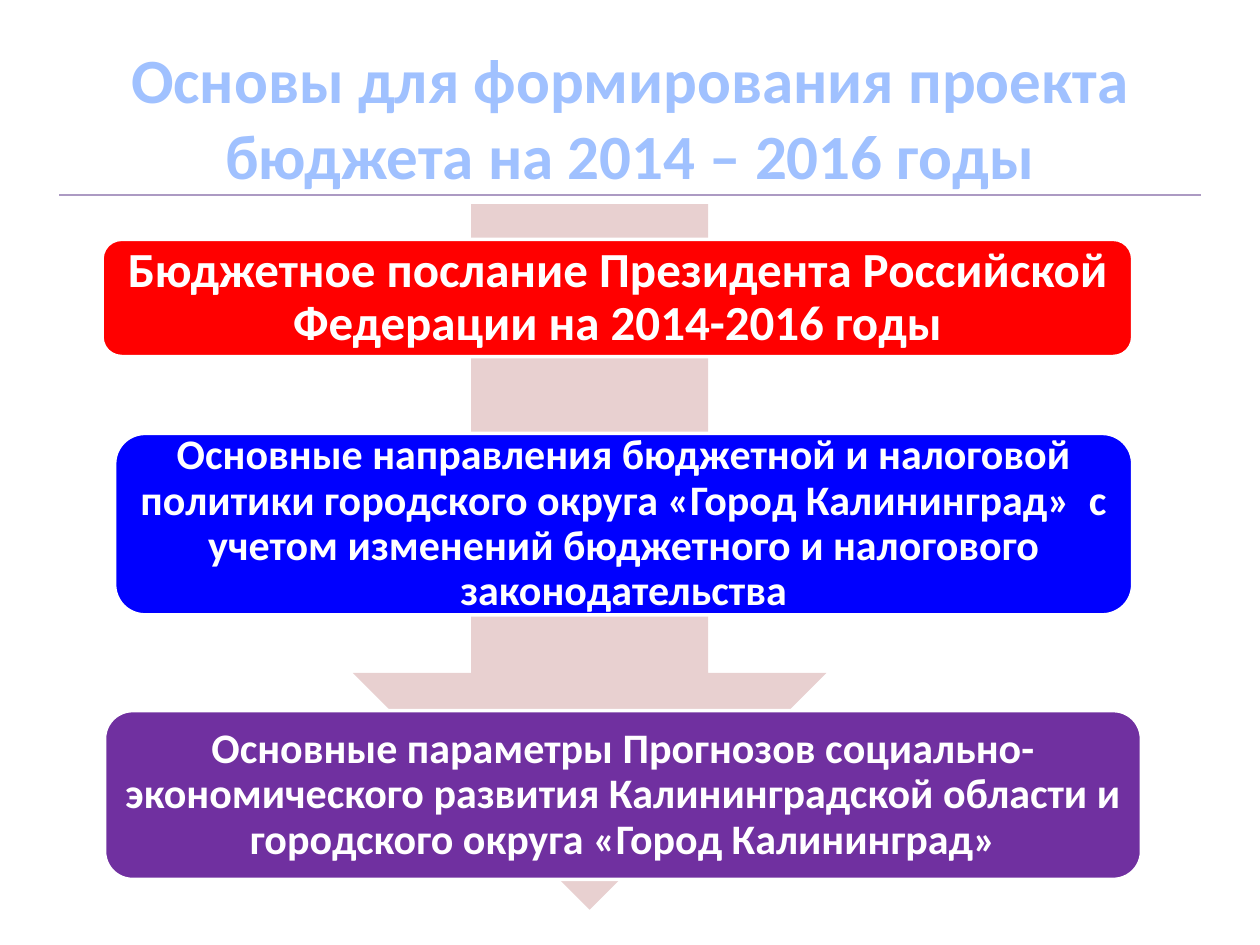
import pptx
import pptx.util
import pptx.dml.color
import pptx.enum.shapes
import pptx.enum.text
import pptx.oxml.ns
import lxml.etree

Inches = pptx.util.Inches
Pt = pptx.util.Pt
RGB = pptx.dml.color.RGBColor.from_string
SHAPE = pptx.enum.shapes.MSO_SHAPE
CENTER = pptx.enum.text.PP_ALIGN.CENTER
MIDDLE = pptx.enum.text.MSO_ANCHOR.MIDDLE

COLORS = {
    "title": "A0C1FF",
    "arrow": "E8D0D0",
    "message": "FF0000",
    "policy": "0000FF",
    "forecast": "7030A0",
    "white": "FFFFFF",
    "rule": "AC9AC3",
}


def set_text(sp, text, size, color, inset, spacing):
    tf = sp.text_frame
    frame = {"word_wrap": True, "vertical_anchor": MIDDLE,
             "auto_size": pptx.enum.text.MSO_AUTO_SIZE.NONE}
    for side in ("left", "right", "top", "bottom"):
        frame[f"margin_{side}"] = Inches(inset)
    for name, value in frame.items():
        setattr(tf, name, value)
    p = tf.paragraphs[0]
    p.alignment = CENTER
    p.line_spacing = spacing
    r = p.add_run()
    r.text = text
    for name, value in {"name": "Calibri", "size": Pt(size), "bold": True}.items():
        setattr(r.font, name, value)
    r.font.color.rgb = RGB(COLORS[color])


def add_block(s, kind, box, color):
    sp = s.shapes.add_shape(kind, *[Inches(v) for v in box])
    sp.shadow.inherit = False
    sp.fill.solid()
    sp.fill.fore_color.rgb = RGB(COLORS[color])
    return sp


prs = pptx.Presentation()
prs.slide_width = Inches(10)
prs.slide_height = Inches(7.5)
s = prs.slides.add_slide(prs.slide_layouts[5])

title = s.shapes.title
place = {"left": 0.5, "top": 0.3, "width": 9, "height": 1.25}
for name, value in place.items():
    setattr(title, name, Inches(value))
set_text(title, "Основы для формирования проекта бюджета на 2014 – 2016 годы",
         36, "title", 0.1, 1.0)

arrow = add_block(s, SHAPE.DOWN_ARROW, (2.8, 1.62, 3.76, 5.6), "arrow")
arrow.line.fill.background()

blocks = [
    ("message", (0.81, 1.9, 8.18, 0.93), 28, 0.12,
     "Бюджетное послание Президента Российской Федерации на 2014-2016 годы"),
    ("forecast", (0.83, 5.64, 8.23, 1.34), 24, 0.1,
     "Основные параметры Прогнозов социально-экономического развития "
     "Калининградской области и городского округа «Город Калининград»"),
    ("policy", (0.91, 3.44, 8.08, 1.44), 24, 0.1,
     "Основные направления бюджетной и налоговой политики городского округа "
     "«Город Калининград»  с учетом изменений бюджетного и налогового "
     "законодательства"),
]
for color, box, size, inset, text in blocks:
    sp = add_block(s, SHAPE.ROUNDED_RECTANGLE, box, color)
    sp.line.color.rgb = RGB(COLORS["white"])
    sp.line.width = Pt(2)
    set_text(sp, text, size, "white", inset, 0.9)

rule = s.shapes.add_connector(
    pptx.enum.shapes.MSO_CONNECTOR.STRAIGHT,
    Inches(0.47), Inches(1.55), Inches(9.53), Inches(1.55))
rule.line.color.rgb = RGB(COLORS["rule"])
rule.line.width = Pt(1)
spPr = rule._element.find(pptx.oxml.ns.qn("p:spPr"))
lxml.etree.SubElement(spPr, pptx.oxml.ns.qn("a:effectLst"))

prs.save("out.pptx")
